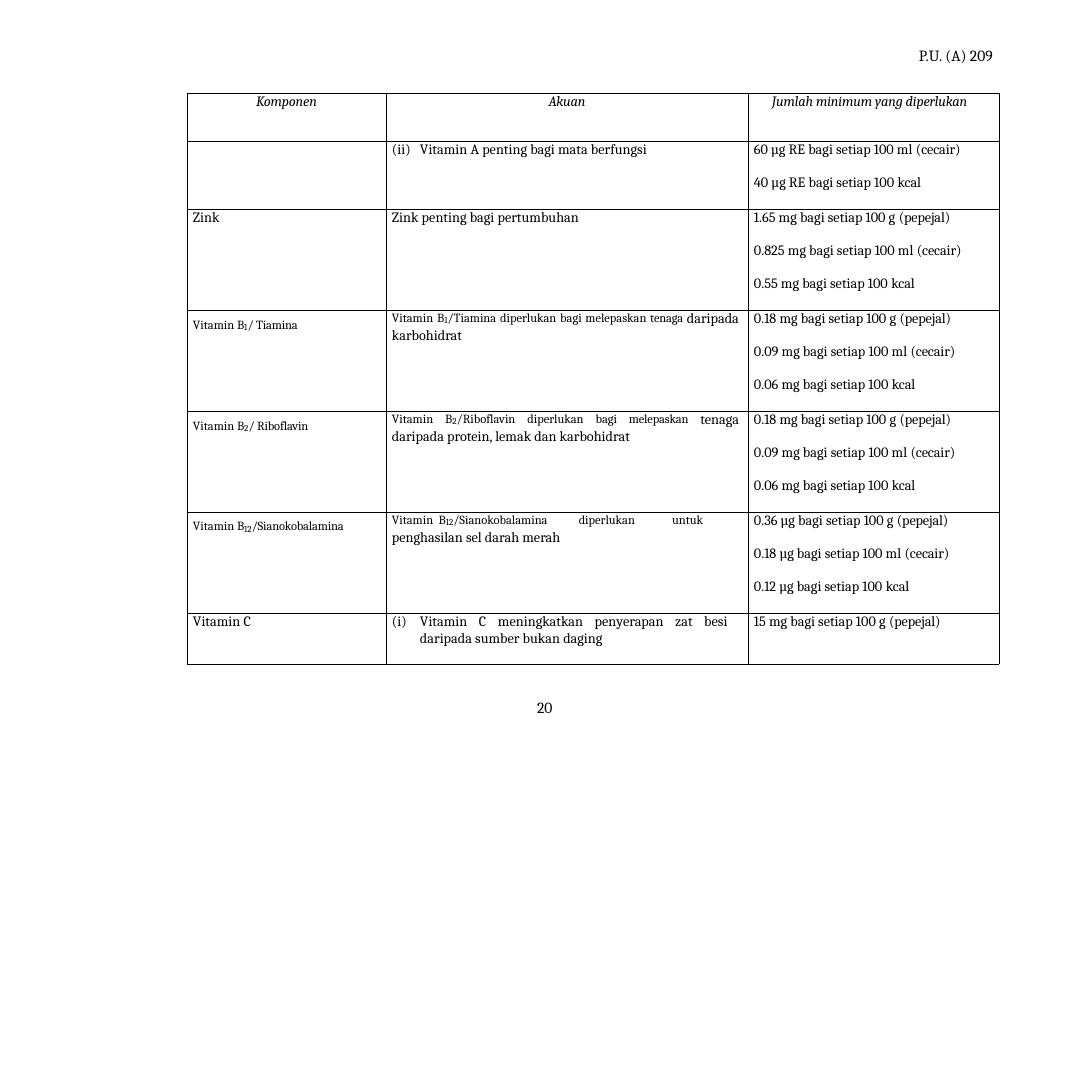
from dataclasses import dataclass

from lxml.etree import SubElement
from pptx import Presentation
from pptx.dml.color import RGBColor
from pptx.enum.text import PP_ALIGN as Align
from pptx.oxml.ns import qn
from pptx.util import Emu, Pt

PX = 9790
SIDE = 1092
INK = "000000"
FONT = "Cambria"
COLUMNS = [199, 362, 251]
ROWS = [48, 68, 101, 101, 101, 101, 51]
BASES = {
    "solid": ("100 g ", "(pepejal)"),
    "liquid": ("100 ml ", "(cecair)"),
    "energy": ("100 ", "kcal"),
}


@dataclass
class Style:
    size: float = 11
    rise: int = 0
    italic: bool = False
    tracking: int = 0


BODY = Style()
TIGHT = Style(tracking=-10)
HEADING = Style(italic=True, tracking=-10)
RAISED = Style(16.5, rise=5000)
RAISED_TIGHT = Style(16.5, rise=5000, tracking=-10)
DIGIT = Style(7)
PAGE_TEXT = Style(12)


@dataclass
class Line:
    spans: list
    indent: int = 6
    hang: int = 0
    leading: float | None = 12.9
    before: float = 0
    align: Align = Align.LEFT
    tabs: tuple = ()


@dataclass
class Entry:
    lines: list
    top: int = 0
    right: int = 0


def px(count):
    return Emu(count * PX)


def color(value):
    return RGBColor.from_string(value)


def add_span(para, text, style):
    span = para.add_run()
    span.text = text
    font = span.font
    font.name, font.size, font.italic = FONT, Pt(style.size), style.italic
    font.color.rgb = color(INK)
    properties = span._r.get_or_add_rPr()
    properties.set("baseline", str(style.rise))
    properties.set("spc", str(style.tracking))


def write_line(para, line):
    para.alignment = line.align
    para.space_before = Pt(line.before)
    if line.leading:
        para.line_spacing = Pt(line.leading)
    properties = para._p.get_or_add_pPr()
    properties.set("marL", str(px(line.indent)))
    properties.set("indent", str(px(-line.hang)))
    if line.tabs:
        stops = SubElement(properties, qn("a:tabLst"))
        for stop in line.tabs:
            SubElement(stops, qn("a:tab"), pos=str(px(stop)), algn="l")
    for text, style in line.spans:
        add_span(para, text, style)


def write_lines(frame, lines):
    for index, line in enumerate(lines):
        write_line(frame.add_paragraph() if index else frame.paragraphs[0], line)


def add_label(page, left, top, width, height, line):
    frame = page.shapes.add_textbox(px(left), px(top), px(width), px(height)).text_frame
    frame.word_wrap = True
    frame.margin_left = frame.margin_right = frame.margin_bottom = 0
    frame.margin_top = px(1)
    write_lines(frame, [line])


def draw_borders(cell):
    properties = cell._tc.get_or_add_tcPr()
    for edge in ("lnL", "lnR", "lnT", "lnB"):
        border = SubElement(properties, qn(f"a:{edge}"), w=str(Pt(0.5)))
        fill = SubElement(border, qn("a:solidFill"))
        SubElement(fill, qn("a:srgbClr"), val=INK)


def fill_cell(cell, entry):
    draw_borders(cell)
    cell.fill.background()
    cell.margin_left = cell.margin_bottom = 0
    cell.margin_top, cell.margin_right = px(entry.top), px(entry.right)
    write_lines(cell.text_frame, entry.lines)


def add_grid(page, left, top, entries):
    frame = page.shapes.add_table(len(ROWS), len(COLUMNS), px(left), px(top),
                                  px(sum(COLUMNS)), px(sum(ROWS)))
    table = frame.table
    table.first_row = table.horz_banding = False
    for column, width in zip(table.columns, COLUMNS):
        column.width = px(width)
    for row, height, row_entries in zip(table.rows, ROWS, entries):
        row.height = px(height)
        for cell, entry in zip(row.cells, row_entries):
            fill_cell(cell, entry)


def heading(text, **layout):
    return Entry([Line([(text, HEADING)], **layout)])


def plain(text):
    return Entry([Line([(text, BODY)])])


def listed(mark, text, right=0, **layout):
    spans = [(f"{mark}\t", BODY), (text, BODY)]
    return Entry([Line(spans, indent=34, hang=28, **layout)], right=right)


def amounts(unit, **values):
    lines = []
    for base, value in values.items():
        measure, kind = BASES[base]
        spans = [(f"{value} {unit} bagi setiap {measure}", BODY), (kind, TIGHT)]
        lines.append(Line(spans, before=12.6 if lines else 0))
    return Entry(lines)


def vitamin(number, name):
    spans = [("Vitamin B", RAISED), (number, DIGIT), (name, RAISED_TIGHT)]
    return Entry([Line(spans, leading=None, before=0.6)], top=1)


def claim(start, number, middle, ending, align=Align.JUSTIFY, tabs=()):
    spans = [(start, RAISED), (number, DIGIT), *middle, (ending, BODY)]
    line = Line(spans, leading=12, before=2, align=align, tabs=tabs)
    return Entry([line], top=3, right=9)


def main():
    deck = Presentation()
    deck.slide_width = deck.slide_height = px(SIDE)
    page = deck.slides.add_slide(deck.slide_layouts[6])
    add_label(page, 918, 45, 82, 22,
              Line([("P.U. (A) 209", PAGE_TEXT)], indent=1, leading=None, before=1))
    add_grid(page, 187, 93, [
        [heading("Komponen", indent=0, align=Align.CENTER),
         heading("Akuan", indent=0, align=Align.CENTER),
         heading("Jumlah minimum yang diperlukan", indent=24)],
        [Entry([]),
         listed("(ii)", "Vitamin A penting bagi mata berfungsi"),
         amounts("µg RE", liquid="60", energy="40")],
        [plain("Zink"),
         plain("Zink penting bagi pertumbuhan"),
         amounts("mg", solid="1.65", liquid="0.825", energy="0.55")],
        [vitamin("1", "/ Tiamina"),
         claim("Vitamin B", "1",
               [("/Tiamina diperlukan bagi melepaskan ", RAISED), ("tenaga ", RAISED_TIGHT)],
               "daripada karbohidrat"),
         amounts("mg", solid="0.18", liquid="0.09", energy="0.06")],
        [vitamin("2", "/ Riboflavin"),
         claim("Vitamin B", "2",
               [("/Riboflavin diperlukan bagi ", RAISED), ("melepaskan ", RAISED_TIGHT)],
               "tenaga daripada protein, lemak dan karbohidrat"),
         amounts("mg", solid="0.18", liquid="0.09", energy="0.06")],
        [vitamin("12", "/Sianokobalamina"),
         claim("Vitamin\tB", "12", [("/Sianokobalamina\tdiperlukan\tuntuk ", RAISED)],
               "penghasilan sel darah merah", Align.LEFT, (78, 230, 318)),
         amounts("µg", solid="0.36", liquid="0.18", energy="0.12")],
        [plain("Vitamin C"),
         listed("(i)", "Vitamin C meningkatkan penyerapan zat besi daripada sumber bukan daging",
                right=20, leading=13, align=Align.JUSTIFY),
         amounts("mg", solid="15")],
    ])
    add_label(page, 533, 697, 26, 31,
              Line([("20", PAGE_TEXT)], indent=4, leading=None, before=0.4))
    deck.save("out.pptx")


if __name__ == "__main__":
    main()
